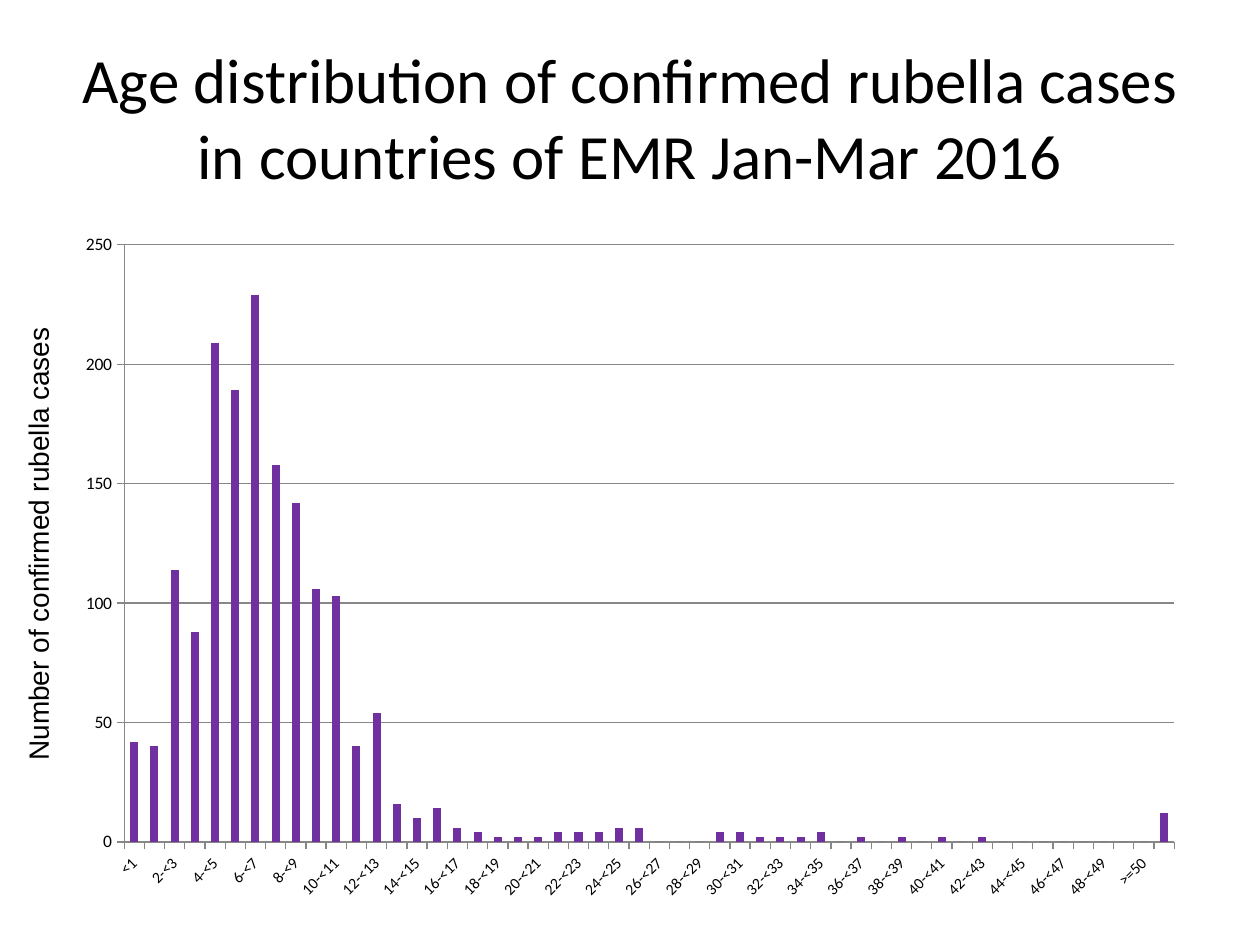
from lxml.etree import SubElement
from pptx import Presentation
from pptx.chart.data import CategoryChartData as ChartData
from pptx.dml.color import RGBColor
from pptx.enum.chart import XL_CHART_TYPE as ChartType, XL_TICK_MARK as Tick
from pptx.enum.text import MSO_ANCHOR as Anchor, PP_ALIGN as Align
from pptx.oxml import parse_xml
from pptx.oxml.ns import nsdecls, qn
from pptx.util import Inches, Pt

CASES = [42, 40, 114, 88, 209, 189, 229, 158, 142, 106, 103, 40, 54, 16, 10, 14, 6,
         4, 2, 2, 2, 4, 4, 4, 6, 6, 0, 0, 0, 4, 4, 2, 2, 2, 4, 0, 2, 0, 2, 0, 2, 0, 2,
         0, 0, 0, 0, 0, 0, 0, 0, 12]
AGES = [""] * len(CASES)
AGES[0:51:2] = ["<1"] + [f"{age}-<{age + 1}" for age in range(2, 50, 2)] + [">=50"]


def color(value):
    return RGBColor.from_string(value)


class Page:
    ink, rule, bar = "000000", "878787", "7030A0"
    heading_font, label_font = "Calibri", "Arial"

    def __init__(self, deck):
        self.width, self.height = deck.slide_width, deck.slide_height
        self.slide = deck.slides.add_slide(deck.slide_layouts[6])

    def frame(self, left, top, width, height):
        return (int(left * self.width), int(top * self.height),
                int(width * self.width), int(height * self.height))

    def style(self, font, size, name):
        font.size, font.name = Pt(size), name
        font.color.rgb = color(self.ink)

    def text(self, words, place, size, name, align=Align.LEFT, anchor=Anchor.TOP, turn=0):
        box = self.slide.shapes.add_textbox(*self.frame(*place))
        box.rotation = turn
        box.text_frame.word_wrap = True
        box.text_frame.vertical_anchor = anchor
        para = box.text_frame.paragraphs[0]
        para.text, para.alignment = words, align
        self.style(para.font, size, name)

    def columns(self, categories, values, place, plot):
        data = ChartData()
        data.categories = categories
        data.add_series("Series 1", values)
        chart = self.slide.shapes.add_chart(
            ChartType.COLUMN_CLUSTERED, *self.frame(*place), data).chart
        chart.has_legend = chart.has_title = False
        self.style(chart.font, 10, self.heading_font)
        bars = chart.plots[0]
        bars.gap_width, bars.vary_by_categories = 150, False
        fill = bars.series[0].format.fill
        fill.solid()
        fill.fore_color.rgb = color(self.bar)
        self.axes(chart)
        self.fix_plot(chart, plot)

    def axes(self, chart):
        ages, counts = chart.category_axis, chart.value_axis
        counts.minimum_scale, counts.maximum_scale, counts.major_unit = 0, 250, 50
        counts.has_major_gridlines = True
        for line in (ages.format.line, counts.format.line, counts.major_gridlines.format.line):
            line.color.rgb = color(self.rule)
            line.width = Pt(0.75)
        for axis in (ages, counts):
            axis.major_tick_mark = Tick.OUTSIDE
        self.style(ages.tick_labels.font, 9, self.heading_font)
        element = chart._chartSpace.find(f".//{qn('c:catAx')}")
        element.find(f"{qn('c:txPr')}/{qn('a:bodyPr')}").set("rot", "-2700000")
        skip = parse_xml(f'<c:tickLblSkip {nsdecls("c")} val="2"/>')
        element.find(qn("c:noMultiLvlLbl")).addprevious(skip)

    def fix_plot(self, chart, plot):
        area = chart._chartSpace.find(f".//{qn('c:plotArea')}")
        for old in area.findall(qn("c:layout")):
            area.remove(old)
        layout = parse_xml(f"<c:layout {nsdecls('c')}><c:manualLayout/></c:layout>")
        settings = {"layoutTarget": "inner", "xMode": "edge", "yMode": "edge"}
        settings.update(zip("xywh", map(str, plot)))
        for tag, value in settings.items():
            SubElement(layout[0], qn(f"c:{tag}")).set("val", value)
        area.insert(0, layout)


def main():
    deck = Presentation()
    deck.slide_width, deck.slide_height = Inches(10), Inches(7.5)
    page = Page(deck)
    page.text("Age distribution of confirmed rubella cases in countries of EMR Jan-Mar 2016",
              (0.05, 0.04, 0.9, 1 / 6), 36, page.heading_font, Align.CENTER, Anchor.MIDDLE)
    page.columns(AGES, CASES, (0.05, 0.7 / 3, 0.9, 2.2 / 3), (0.054, 0.035, 0.926, 0.862))
    page.text("Number of confirmed rubella cases", (-0.172, 0.523, 0.405, 0.05),
              16, page.label_font, turn=270)
    deck.save("out.pptx")


if __name__ == "__main__":
    main()
